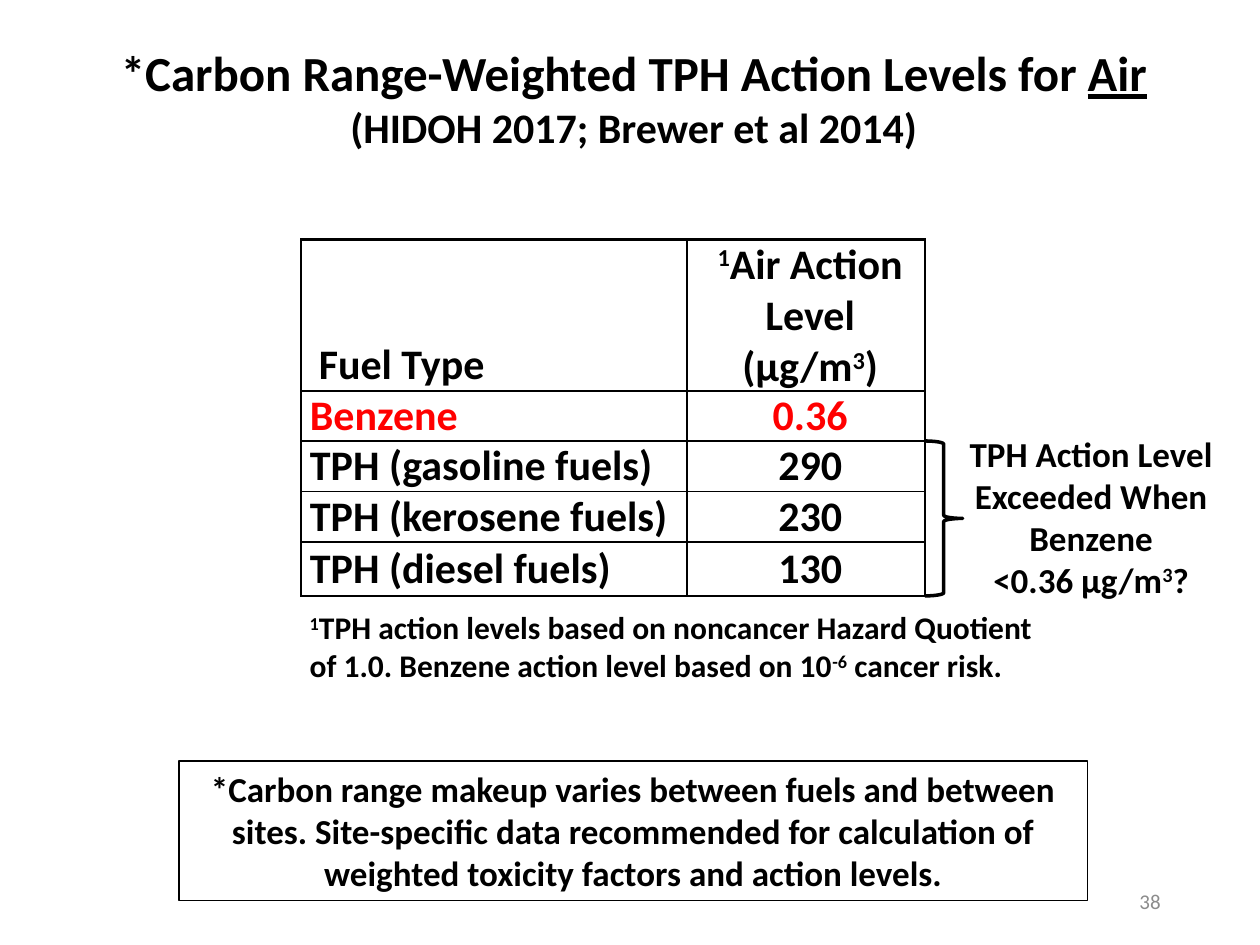
from lxml import etree
from pptx import Presentation
from pptx.dml.color import RGBColor
from pptx.enum.shapes import MSO_SHAPE
from pptx.enum.text import MSO_ANCHOR, PP_ALIGN
from pptx.oxml.ns import qn
from pptx.util import Inches, Pt

LEFT, CENTER, RIGHT = PP_ALIGN.LEFT, PP_ALIGN.CENTER, PP_ALIGN.RIGHT
TOP, MIDDLE, BOTTOM = MSO_ANCHOR.TOP, MSO_ANCHOR.MIDDLE, MSO_ANCHOR.BOTTOM
RECTANGLE, RIGHT_BRACE = MSO_SHAPE.RECTANGLE, MSO_SHAPE.RIGHT_BRACE
TITLE_ONLY = 5

COLORS = {"ink": "000000", "benzene": "FF0000", "page": "8C8C8C"}
FONT = "Calibri"
SUPER = "^"  # text between two of these marks is superscript

TABLE_LEFT, TABLE_TOP = 2.39, 1.9
COLUMN_WIDTHS = [3.06, 1.89]
ROW_HEIGHTS = [1.2, 0.4, 0.4, 0.4, 0.43]
FIRST_TPH_ROW = 2
HEADER = [["Fuel Type"], ["^1^Air Action Level", "(µg/m^3^)"]]
ACTION_LEVELS = [
    ("Benzene", "0.36"),
    ("TPH (gasoline fuels)", "290"),
    ("TPH (kerosene fuels)", "230"),
    ("TPH (diesel fuels)", "130"),
]


def rgb(name):
    return RGBColor.from_string(COLORS[name])


def add_run(paragraph, text, size, color="ink", **extra):
    run = paragraph.add_run()
    run.text = text
    settings = {"name": FONT, "size": Pt(size), "bold": True, **extra}
    for attribute, value in settings.items():
        setattr(run.font, attribute, value)
    run.font.color.rgb = rgb(color)
    return run


def add_marked_text(paragraph, text, size, color="ink", **extra):
    """Add runs, raising the parts between SUPER marks."""
    for index, part in enumerate(text.split(SUPER)):
        if part:
            run = add_run(paragraph, part, size, color, **extra)
            if index % 2:
                run.font._element.set("baseline", "30000")


def write_lines(frame, lines, size, color="ink", align=LEFT, **extra):
    frame.word_wrap = True
    for index, line in enumerate(lines):
        paragraph = frame.add_paragraph() if index else frame.paragraphs[0]
        paragraph.alignment = align
        add_marked_text(paragraph, line, size, color, **extra)


def place(shape, left, top, width, height):
    box = {"left": left, "top": top, "width": width, "height": height}
    for side, value in box.items():
        setattr(shape, side, Inches(value))


def add_note(slide, box, lines, size, anchor=TOP, **style):
    frame = slide.shapes.add_textbox(*map(Inches, box)).text_frame
    frame.vertical_anchor = anchor
    write_lines(frame, lines, size, **style)


def add_outline(slide, preset, box, line_width):
    shape = slide.shapes.add_shape(preset, *map(Inches, box))
    shape.shadow.inherit = False
    shape.fill.background()
    shape.line.color.rgb = rgb("ink")
    shape.line.width = Pt(line_width)
    return shape


def fill_title(slide):
    title = slide.shapes.title
    place(title, 0.42, 0.29, 9.22, 0.98)
    frame = title.text_frame
    frame.vertical_anchor = TOP
    write_lines(frame, ["*Carbon Range-Weighted TPH Action Levels for "], 28, align=CENTER)
    add_run(frame.paragraphs[0], "Air", 28, underline=True)
    source = frame.add_paragraph()
    source.alignment = CENTER
    add_run(source, "(HIDOH 2017; Brewer et al 2014)", 24)


def set_borders(cell, widths):
    properties = cell._tc.get_or_add_tcPr()
    for side, width in zip("LRTB", widths):
        border = etree.SubElement(properties, qn(f"a:ln{side}"), w=str(Pt(width)))
        fill = etree.SubElement(border, qn("a:solidFill"))
        etree.SubElement(fill, qn("a:srgbClr"), val=COLORS["ink"])


def format_cell(cell, row, column):
    last = len(ROW_HEIGHTS) - 1
    above = 1.5 if row <= 1 else 1
    below = 1.5 if row in (0, last) else 1
    set_borders(cell, (1.5, 1.5, above, below))
    cell.fill.background()
    indent = 0.07 if column or row == 0 else 0
    settings = {
        "margin_left": Inches(0.07 + indent),
        "margin_right": Inches(0.07),
        "margin_top": 0,
        "margin_bottom": 0,
        "vertical_anchor": MIDDLE if row else BOTTOM,
    }
    for attribute, value in settings.items():
        setattr(cell, attribute, value)


def add_action_levels(slide):
    rows = [HEADER] + [[[fuel], [level]] for fuel, level in ACTION_LEVELS]
    box = (TABLE_LEFT, TABLE_TOP, sum(COLUMN_WIDTHS), sum(ROW_HEIGHTS))
    table = slide.shapes.add_table(
        len(rows), len(COLUMN_WIDTHS), *map(Inches, box)
    ).table
    table.first_row = table.horz_banding = False
    for column, width in zip(table.columns, COLUMN_WIDTHS):
        column.width = Inches(width)
    for row, height in zip(table.rows, ROW_HEIGHTS):
        row.height = Inches(height)
    for r, row in enumerate(rows):
        for c, lines in enumerate(row):
            cell = table.cell(r, c)
            format_cell(cell, r, c)
            color = "benzene" if r == 1 else "ink"
            write_lines(cell.text_frame, lines, 24, color, CENTER if c else LEFT)


def add_tph_brace(slide):
    """Bracket the TPH rows at the table's right edge."""
    left = TABLE_LEFT + sum(COLUMN_WIDTHS)
    top = TABLE_TOP + sum(ROW_HEIGHTS[:FIRST_TPH_ROW])
    height = sum(ROW_HEIGHTS[FIRST_TPH_ROW:])
    add_outline(slide, RIGHT_BRACE, (left, top, 0.3, height), 2)


def add_caveat(slide):
    caveat = add_outline(slide, RECTANGLE, (1.42, 6.04, 7.21, 1.11), 0.75)
    caveat.text_frame.vertical_anchor = TOP
    write_lines(
        caveat.text_frame,
        ["*Carbon range makeup varies between fuels and between sites. "
         "Site-specific data recommended for calculation of weighted "
         "toxicity factors and action levels."],
        20, align=CENTER,
    )


def main():
    deck = Presentation()
    deck.slide_width, deck.slide_height = Inches(10), Inches(7.5)
    slide = deck.slides.add_slide(deck.slide_layouts[TITLE_ONLY])
    fill_title(slide)
    add_caveat(slide)
    add_note(slide, (7.06, 6.95, 2.25, 0.4), ["38"], 12, MIDDLE,
             color="page", align=RIGHT, bold=False)
    add_action_levels(slide)
    add_note(slide, (2.36, 4.78, 6, 0.71),
             ["^1^TPH action levels based on noncancer Hazard Quotient of 1.0. "
              "Benzene action level based on 10^-6^ cancer risk."], 18)
    add_note(slide, (7.51, 3.38, 2.3, 1.45),
             ["TPH Action Level Exceeded When Benzene", "<0.36 µg/m^3^?"],
             20, align=CENTER)
    add_tph_brace(slide)
    deck.save("out.pptx")


if __name__ == "__main__":
    main()
